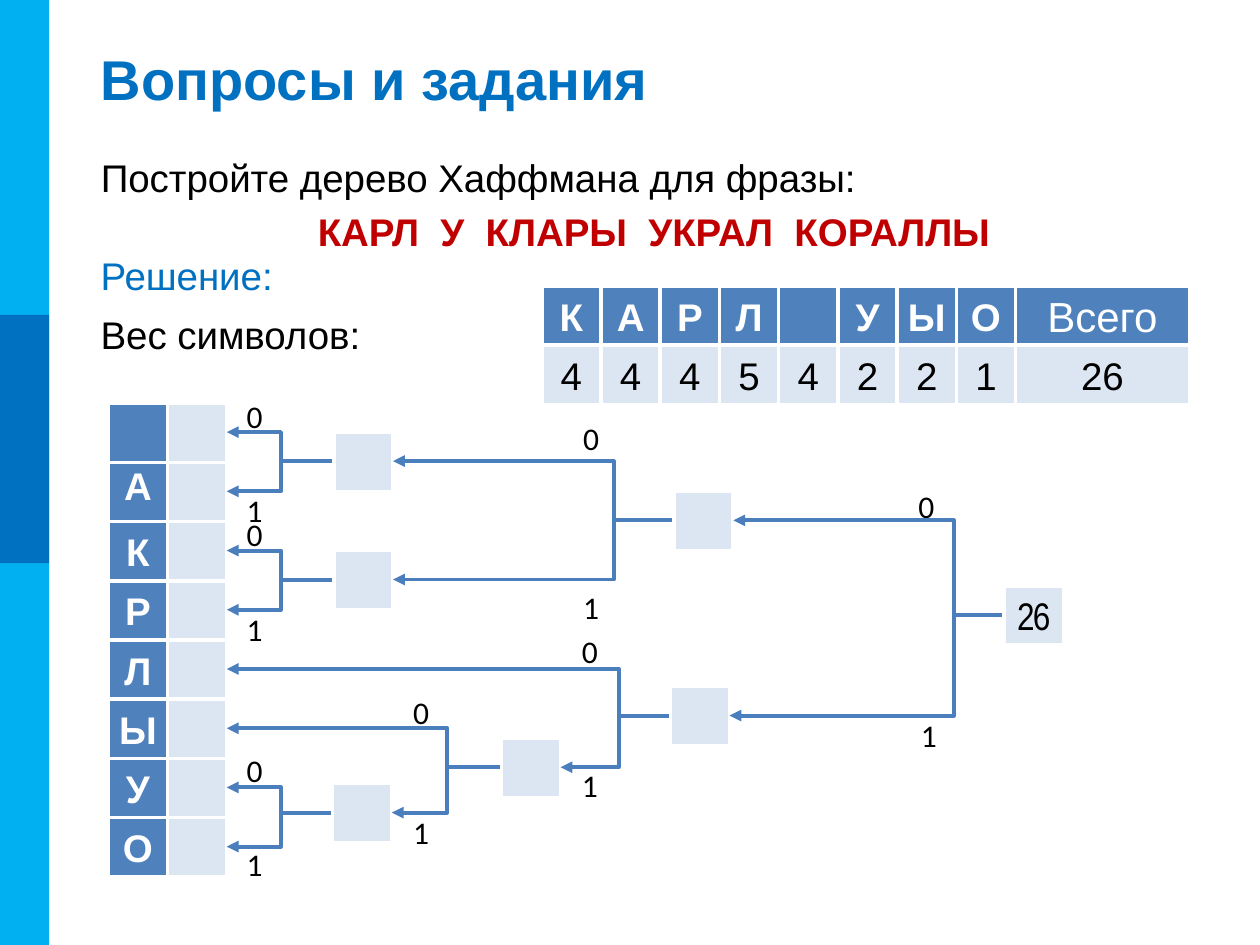
"""Builds a slide that solves a Huffman tree exercise."""
import pptx
import pptx.dml.color
import pptx.enum.shapes
import pptx.enum.text
import pptx.oxml.ns
import pptx.oxml.xmlchemy
import pptx.util

PX = 9144
SIDE = 47
HALF = SIDE // 2
BLUE, DARK, PALE, WHITE, BLACK = "0070C0", "4F81BD", "DCE6F2", "FFFFFF", "000000"
ALIGN = pptx.enum.text.PP_ALIGN
ANCHOR = pptx.enum.text.MSO_ANCHOR

BANDS = [((0, 0, 39, 750), "00B0F0"), ((0, 250, 39, 197), BLUE)]
TITLE = "Вопросы и задания"
TASK = [
    ("Постройте дерево Хаффмана для фразы:", BLACK, False, ALIGN.JUSTIFY),
    ("КАРЛ  У  КЛАРЫ  УКРАЛ  КОРАЛЛЫ", "C00000", True, ALIGN.CENTER),
]
STEPS = [("Решение:", BLUE, 195), ("Вес символов:", BLACK, 242)]
WEIGHTS = [("К", 4), ("А", 4), ("Р", 4), ("Л", 5), ("", 4), ("У", 2), ("Ы", 2), ("О", 1)]
TOTAL = ("Всего", 26)
WEIGHTS_LEFT, WEIGHTS_TOP, TOTAL_WIDTH = 430, 227, 138
LEAVES = ["", "А", "К", "Р", "Л", "Ы", "У", "О"]
LEAVES_LEFT, LEAVES_TOP = 86, 320
# name, left, top, text, elbow x, then a child and its label corner for bits 0 and 1
NODES = [
    ("_А", 265, 343, "", 223, [("", 186, 310), ("А", 186, 385)]),
    ("КР", 265, 437, "", 223, [("К", 186, 404), ("Р", 186, 479)]),
    ("УО", 264, 622, "", 223, [("У", 186, 591), ("О", 186, 666)]),
    ("ЫУО", 398, 586, "", 355, [("Ы", 318, 545), ("УО", 318, 640)]),
    ("ЛЫУО", 532, 545, "", 491, [("Л", 452, 497), ("ЫУО", 452, 603)]),
    ("_АКР", 535, 390, "", 487, [("_А", 453, 328), ("КР", 453, 462)]),
    ("root", 797, 465, "26", 757, [("_АКР", 719, 382), ("ЛЫУО", 721, 563)]),
]


def px(*lengths):
    """Turns px lengths into EMU."""
    return [pptx.util.Emu(length * PX) for length in lengths]


def rgb(value):
    """Turns a hex string into a colour."""
    return pptx.dml.color.RGBColor.from_string(value)


def write(para, text, size, color, bold=False, font="Arial", align=None):
    """Adds one formatted run to a paragraph and returns it."""
    para.alignment = align
    span = para.add_run()
    span.text = text
    span.font.size = pptx.util.Pt(size)
    span.font.name = font
    span.font.bold = bold
    span.font.color.rgb = rgb(color)
    return span


def rectangle(page, place, fill):
    """Adds a plain filled rectangle."""
    box = page.shapes.add_shape(pptx.enum.shapes.MSO_SHAPE.RECTANGLE, *px(*place))
    box.shadow.inherit = False
    box.fill.solid()
    box.fill.fore_color.rgb = rgb(fill)
    box.line.fill.background()
    return box


def tile(page, left, top, fill, text="", width=SIDE, size=22, bold=False, font="Arial"):
    """Adds a white-edged cell with centred text."""
    box = rectangle(page, (left, top, width, SIDE), fill)
    box.line.color.rgb = rgb(WHITE)
    box.line.width = pptx.util.Pt(2)
    frame = box.text_frame
    frame.word_wrap = False
    frame.vertical_anchor = ANCHOR.MIDDLE
    if text:
        color = WHITE if fill == DARK else BLACK
        write(frame.paragraphs[0], text, size, color, bold, font, ALIGN.CENTER)
    return box


def text_box(page, place, wrap):
    """Adds a text box and returns its first paragraph."""
    frame = page.shapes.add_textbox(*px(*place)).text_frame
    frame.word_wrap = wrap
    return frame.paragraphs[0]


def branch(page, start, end, elbow):
    """Adds an elbow connector with an arrowhead at its start."""
    line = page.shapes.add_connector(
        pptx.enum.shapes.MSO_CONNECTOR.ELBOW, *px(*start, *end))
    line.line.color.rgb = rgb("4B7EBC")
    line.line.width = pptx.util.Pt(2.25)
    element = pptx.oxml.xmlchemy.OxmlElement
    head = element("a:headEnd")
    head.set("type", "triangle")
    line.line._get_or_add_ln().append(head)
    properties = line._element.spPr
    properties.append(element("a:effectLst"))
    guide = element("a:gd")
    guide.set("name", "adj1")
    guide.set("fmla", f"val {round(100000 * (elbow - start[0]) / (end[0] - start[0]))}")
    geometry = properties.find(pptx.oxml.ns.qn("a:prstGeom"))
    geometry.get_or_add_avLst().append(guide)


def add_texts(page):
    """Fills the title, the task and the two solution lines."""
    title, body = page.shapes.title, page.placeholders[1]
    title.left, title.top, title.width, title.height = px(70, 30, 902, 64)
    title.text_frame.vertical_anchor = ANCHOR.MIDDLE
    write(title.text_frame.paragraphs[0], TITLE, 32, BLUE, True, align=ALIGN.LEFT)
    body.left, body.top, body.width, body.height = px(70, 117, 898, 117)
    frame = body.text_frame
    for index, (text, color, bold, align) in enumerate(TASK):
        para = frame.add_paragraph() if index else frame.paragraphs[0]
        write(para, text, 22, color, bold, align=align)
        properties = para._p.get_or_add_pPr()
        properties.set("marL", "0")
        properties.set("indent", "0")
        properties.append(pptx.oxml.xmlchemy.OxmlElement("a:buNone"))
    for text, color, top in STEPS:
        para = text_box(page, (70, top, 898, 55), True)
        para.space_before = pptx.util.Pt(4.4)
        write(para, text, 22, color, align=ALIGN.JUSTIFY)


def add_weights(page):
    """Draws the symbol weights and their total."""
    columns = [(*pair, SIDE, 22, True) for pair in WEIGHTS]
    columns.append((*TOTAL, TOTAL_WIDTH, 24, False))
    left = WEIGHTS_LEFT
    for name, weight, width, size, bold in columns:
        tile(page, left, WEIGHTS_TOP, DARK, name, width, size, bold)
        tile(page, left, WEIGHTS_TOP + SIDE, PALE, str(weight), width)
        left += width


def add_tree(page):
    """Draws the leaves, the inner nodes and the labelled branches."""
    exits = {}
    for row, letter in enumerate(LEAVES):
        top = LEAVES_TOP + row * SIDE
        leaf = tile(page, LEAVES_LEFT, top, DARK, letter, bold=True)
        if letter == "А":
            leaf.text_frame.vertical_anchor = ANCHOR.TOP
            leaf.text_frame.margin_top = 0
        tile(page, LEAVES_LEFT + SIDE, top, PALE)
        exits[letter] = (LEAVES_LEFT + 2 * SIDE, top + HALF)
    for name, left, top, text, elbow, children in NODES:
        for bit, (child, label_left, label_top) in enumerate(children):
            para = text_box(page, (label_left, label_top, 31, 40), False)
            write(para, str(bit), 18, BLACK, font="Calibri")
            branch(page, exits[child], (left, top + HALF), elbow)
        node = tile(page, left, top, PALE, text, font="Arial Narrow")
        for span in node.text_frame.paragraphs[0].runs:
            span.font._element.set("spc", "-100")
        exits[name] = (left + SIDE, top + HALF)


def main():
    """Builds and saves the deck."""
    deck = pptx.Presentation()
    deck.slide_width, deck.slide_height = px(1000, 750)
    page = deck.slides.add_slide(deck.slide_layouts[1])
    for place, color in BANDS:
        rectangle(page, place, color)
    add_texts(page)
    add_weights(page)
    add_tree(page)
    deck.save("out.pptx")


if __name__ == "__main__":
    main()
